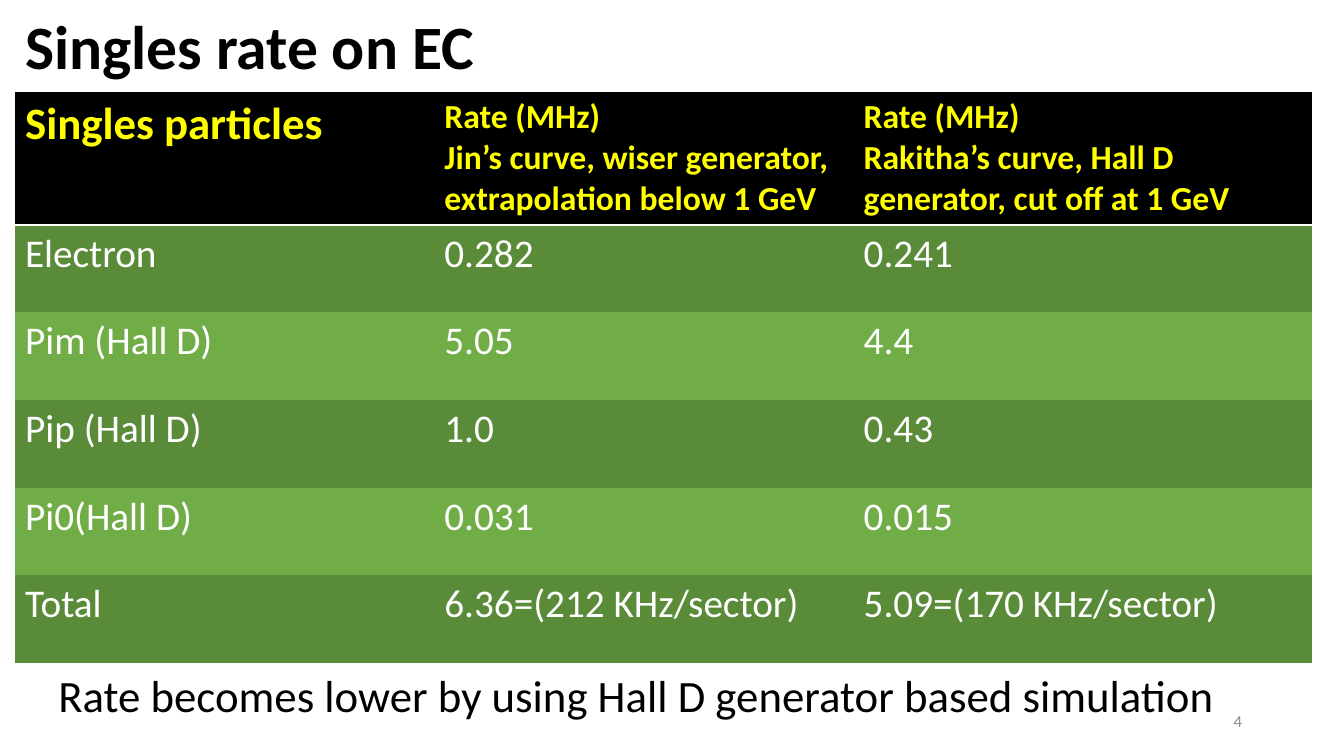
"""Build a slide with a table of singles rates on EC."""
from dataclasses import dataclass

from lxml.etree import SubElement
from pptx import Presentation
from pptx.dml.color import RGBColor
from pptx.enum.text import MSO_ANCHOR, MSO_AUTO_SIZE, PP_ALIGN
from pptx.oxml import parse_xml
from pptx.oxml.ns import nsdecls, qn
from pptx.util import Inches, Pt

BLACK = RGBColor(0x00, 0x00, 0x00)
WHITE = RGBColor(0xFF, 0xFF, 0xFF)
YELLOW = RGBColor(0xFF, 0xFF, 0x00)
GREY = RGBColor(0x8C, 0x8C, 0x8C)
DARK = RGBColor(0x5A, 0x8B, 0x39)
LIGHT = RGBColor(0x70, 0xAD, 0x47)

WIDTH, HEIGHT = Inches(13.33), Inches(7.5)
COL, ROW = WIDTH / 100, HEIGHT / 100
WIDTHS = (31.2, 31.2, 34.13)
HEADER, BAND = 13.6, 11.6
PLAIN = "{2D5ABB26-0587-4C30-8999-92F81FD0307C}"

RATES = (
    ("Singles particles",
     "Rate (MHz)\nJin’s curve, wiser generator, extrapolation below 1 GeV",
     "Rate (MHz)\nRakitha’s curve, Hall D generator, cut off at 1 GeV"),
    ("Electron", "0.282", "0.241"),
    ("Pim (Hall D)", "5.05", "4.4"),
    ("Pip (Hall D)", "1.0", "0.43"),
    ("Pi0(Hall D)", "0.031", "0.015"),
    ("Total", "6.36=(212 KHz/sector)", "5.09=(170 KHz/sector)"),
)


@dataclass(frozen=True)
class Area:
    """A place on the grid of 100 columns and 100 rows."""
    left: float
    top: float
    width: float
    height: float

    def box(self) -> tuple[int, int, int, int]:
        """Return left, top, width and height in EMU."""
        return (round(self.left * COL), round(self.top * ROW),
                round(self.width * COL), round(self.height * ROW))


@dataclass(frozen=True)
class Label:
    """A line of text with its place and look."""
    text: str
    area: Area
    size: int
    color: RGBColor
    bold: bool = False
    align: PP_ALIGN = PP_ALIGN.LEFT
    anchor: MSO_ANCHOR = MSO_ANCHOR.TOP
    wrap: bool = True
    fit: MSO_AUTO_SIZE = MSO_AUTO_SIZE.NONE
    space: float = 1.0


TITLE = Label("Singles rate on EC", Area(1.12, 0.4, 90.85, 12.4), 44, BLACK,
              bold=True, anchor=MSO_ANCHOR.MIDDLE, space=0.9)
LABELS = (
    Label("4", Area(70.67, 92.67, 22.5, 5.33), 12, GREY,
          align=PP_ALIGN.RIGHT, anchor=MSO_ANCHOR.MIDDLE),
    Label("Rate becomes lower by using Hall D generator based simulation",
          Area(3.6, 87.6, 88.45, 8.53), 32, BLACK, wrap=False,
          fit=MSO_AUTO_SIZE.SHAPE_TO_FIT_TEXT),
)
TABLE = Area(1.12, 12.13, sum(WIDTHS), HEADER + BAND * (len(RATES) - 1))


def apply(target, values: dict) -> None:
    """Set each named value on the target."""
    for name, value in values.items():
        setattr(target, name, value)


def style(frame, size: int, color: RGBColor, bold: bool) -> None:
    """Format all runs of a text frame."""
    for para in frame.paragraphs:
        for run in para.runs:
            apply(run.font, {"name": "Calibri", "size": Pt(size), "bold": bold})
            run.font.color.rgb = color


def write(shape, label: Label) -> None:
    """Place a shape and fill it with a label."""
    apply(shape, dict(zip(("left", "top", "width", "height"), label.area.box())))
    frame = shape.text_frame
    frame.text = label.text
    apply(frame, {"word_wrap": label.wrap, "auto_size": label.fit,
                  "vertical_anchor": label.anchor})
    apply(frame.paragraphs[0], {"alignment": label.align,
                                "line_spacing": label.space})
    style(frame, label.size, label.color, label.bold)


def rule(cell) -> None:
    """Draw a white line under a cell."""
    line = parse_xml(f'<a:lnB {nsdecls("a")} w="{Pt(2)}"/>')
    fill = SubElement(line, qn("a:solidFill"))
    SubElement(fill, qn("a:srgbClr"), val=str(WHITE))
    cell.fill.solid()
    cell._tc.tcPr.insert(0, line)


def tabulate(slide) -> None:
    """Add the table of rates."""
    table = slide.shapes.add_table(len(RATES), len(WIDTHS), *TABLE.box()).table
    table._tbl.tblPr.find(qn("a:tableStyleId")).text = PLAIN
    for col, width in zip(table.columns, WIDTHS):
        col.width = round(width * COL)
    for r, texts in enumerate(RATES):
        head = r == 0
        table.rows[r].height = round((HEADER if head else BAND) * ROW)
        for c, text in enumerate(texts):
            cell = table.cell(r, c)
            cell.text = text
            if head:
                rule(cell)
                style(cell.text_frame, 24 if c else 32, YELLOW, True)
            else:
                style(cell.text_frame, 28, WHITE, False)
            cell.fill.solid()
            cell.fill.fore_color.rgb = BLACK if head else DARK if r % 2 else LIGHT


def main() -> None:
    """Build and save the slide."""
    deck = Presentation()
    apply(deck, {"slide_width": WIDTH, "slide_height": HEIGHT})
    slide = deck.slides.add_slide(deck.slide_layouts[5])
    write(slide.shapes.title, TITLE)
    tabulate(slide)
    for label in LABELS:
        write(slide.shapes.add_textbox(*label.area.box()), label)
    deck.save("out.pptx")


if __name__ == "__main__":
    main()
